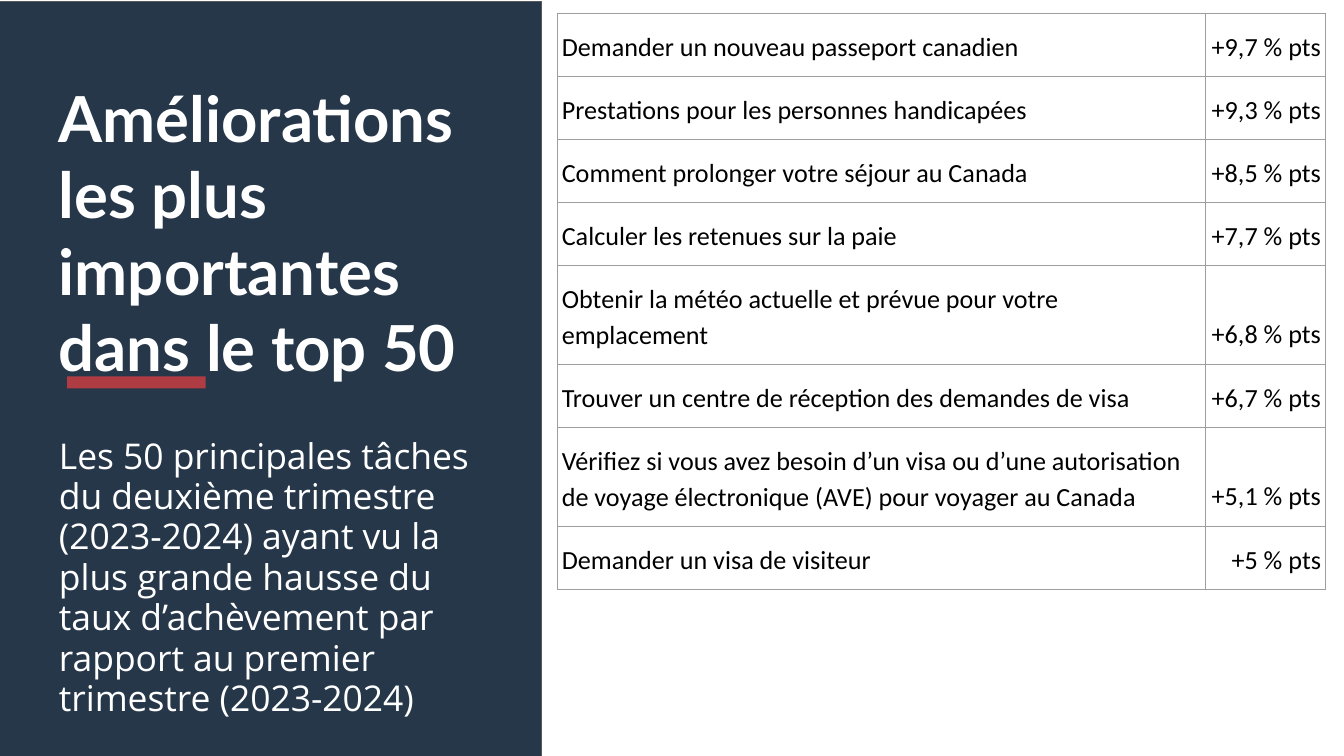
from typing import NamedTuple

from lxml.etree import SubElement
from pptx import Presentation
from pptx.dml.color import RGBColor
from pptx.enum.shapes import MSO_SHAPE as Shape
from pptx.enum.text import MSO_ANCHOR as Anchor, PP_ALIGN as Align
from pptx.oxml.ns import qn
from pptx.util import Inches, Pt

NAVY = RGBColor(0x26, 0x37, 0x4A)
RED = RGBColor(0xAF, 0x3C, 0x43)
WHITE = RGBColor(0xFF, 0xFF, 0xFF)
BLACK = RGBColor(0x00, 0x00, 0x00)
PANEL_EDGE = RGBColor(0x59, 0x59, 0x59)
GRID = RGBColor(0x9E, 0x9E, 0x9E)


class Box(NamedTuple):
    left: float
    top: float
    width: float
    height: float

    def lengths(self) -> list:
        return [Inches(value) for value in self]


class Style(NamedTuple):
    font: str
    size: float
    color: RGBColor
    bold: bool = False
    spacing: float = 1.0


class Task(NamedTuple):
    name: str
    gain: str
    height: float = 0.46


TITLE = Style("Lato", 34, WHITE, bold=True)
SUMMARY = Style("Open Sans", 19, WHITE, spacing=0.95)
CELL = Style("Calibri", 14, BLACK, spacing=1.15)

TASKS = [
    Task("Demander un nouveau passeport canadien", "+9,7 % pts"),
    Task("Prestations pour les personnes handicapées", "+9,3 % pts"),
    Task("Comment prolonger votre séjour au Canada", "+8,5 % pts"),
    Task("Calculer les retenues sur la paie", "+7,7 % pts"),
    Task("Obtenir la météo actuelle et prévue pour votre emplacement", "+6,8 % pts"),
    Task("Trouver un centre de réception des demandes de visa", "+6,7 % pts"),
    Task("Vérifiez si vous avez besoin d’un visa ou d’une autorisation "
         "de voyage électronique (AVE) pour voyager au Canada", "+5,1 % pts", 0.72),
    Task("Demander un visa de visiteur", "+5 % pts"),
]
COLUMN_WIDTHS = (4.82, 0.89)


def write(frame, text: str, style: Style, align=Align.LEFT) -> None:
    paragraph = frame.paragraphs[0]
    paragraph.alignment = align
    paragraph.line_spacing = style.spacing
    run = paragraph.add_run()
    run.text = text
    run.font.name = style.font
    run.font.size = Pt(style.size)
    run.font.bold = style.bold
    run.font.color.rgb = style.color


def add_text(slide, box: Box, text: str, style: Style) -> None:
    frame = slide.shapes.add_textbox(*box.lengths()).text_frame
    frame.word_wrap = True
    frame.vertical_anchor = Anchor.TOP
    frame.margin_left = frame.margin_right = Inches(0.1)
    frame.margin_top = frame.margin_bottom = Inches(0.1)
    write(frame, text, style)


def add_block(slide, box: Box, fill: RGBColor, edge: RGBColor | None = None) -> None:
    block = slide.shapes.add_shape(Shape.RECTANGLE, *box.lengths())
    block.shadow.inherit = False
    block.fill.solid()
    block.fill.fore_color.rgb = fill
    if edge is None:
        block.line.fill.background()
    else:
        block.line.color.rgb = edge
        block.line.width = Pt(0.75)


def fill_cell(cell, text: str, align) -> None:
    cell.vertical_anchor = Anchor.BOTTOM
    cell.margin_left = cell.margin_right = Inches(0.03)
    cell.margin_top = cell.margin_bottom = Inches(0.1)
    write(cell.text_frame, text, CELL, align)
    # Borders come before the fill in the cell properties
    properties = cell._tc.get_or_add_tcPr()
    for side in ("a:lnL", "a:lnR", "a:lnT", "a:lnB"):
        border = SubElement(properties, qn(side), w=str(Pt(0.75)))
        SubElement(SubElement(border, qn("a:solidFill")), qn("a:srgbClr"), val=str(GRID))
    cell.fill.background()


def add_task_table(slide, left: float, top: float) -> None:
    box = Box(left, top, sum(COLUMN_WIDTHS), sum(task.height for task in TASKS))
    table = slide.shapes.add_table(len(TASKS), len(COLUMN_WIDTHS), *box.lengths()).table
    table.first_row = table.horz_banding = False
    for column, width in zip(table.columns, COLUMN_WIDTHS):
        column.width = Inches(width)
    for index, task in enumerate(TASKS):
        table.rows[index].height = Inches(task.height)
        fill_cell(table.cell(index, 0), task.name, Align.LEFT)
        fill_cell(table.cell(index, 1), task.gain, Align.RIGHT)


def main() -> None:
    deck = Presentation()
    # Widescreen, 16 to 9
    deck.slide_width, deck.slide_height = Inches(10), Inches(10 * 9 / 16)
    slide = deck.slides.add_slide(deck.slide_layouts[6])

    # Left panel with title, summary and accent bar
    add_block(slide, Box(-0.05, 0.01, 4.08, 5.62), NAVY, PANEL_EDGE)
    add_text(slide, Box(0.34, 0.49, 3.36, 2.22),
             "Améliorations les plus importantes dans le top 50", TITLE)
    add_text(slide, Box(0.34, 3.15, 3.41, 2.22),
             "Les 50 principales tâches du deuxième trimestre (2023-2024) ayant vu "
             "la plus grande hausse du taux d’achèvement par rapport au premier "
             "trimestre (2023-2024)", SUMMARY)
    add_block(slide, Box(0.5, 2.8, 1.03, 0.09), RED)

    # Tasks and their gains
    add_task_table(slide, 4.15, 0.1)

    deck.save("out.pptx")


if __name__ == "__main__":
    main()
